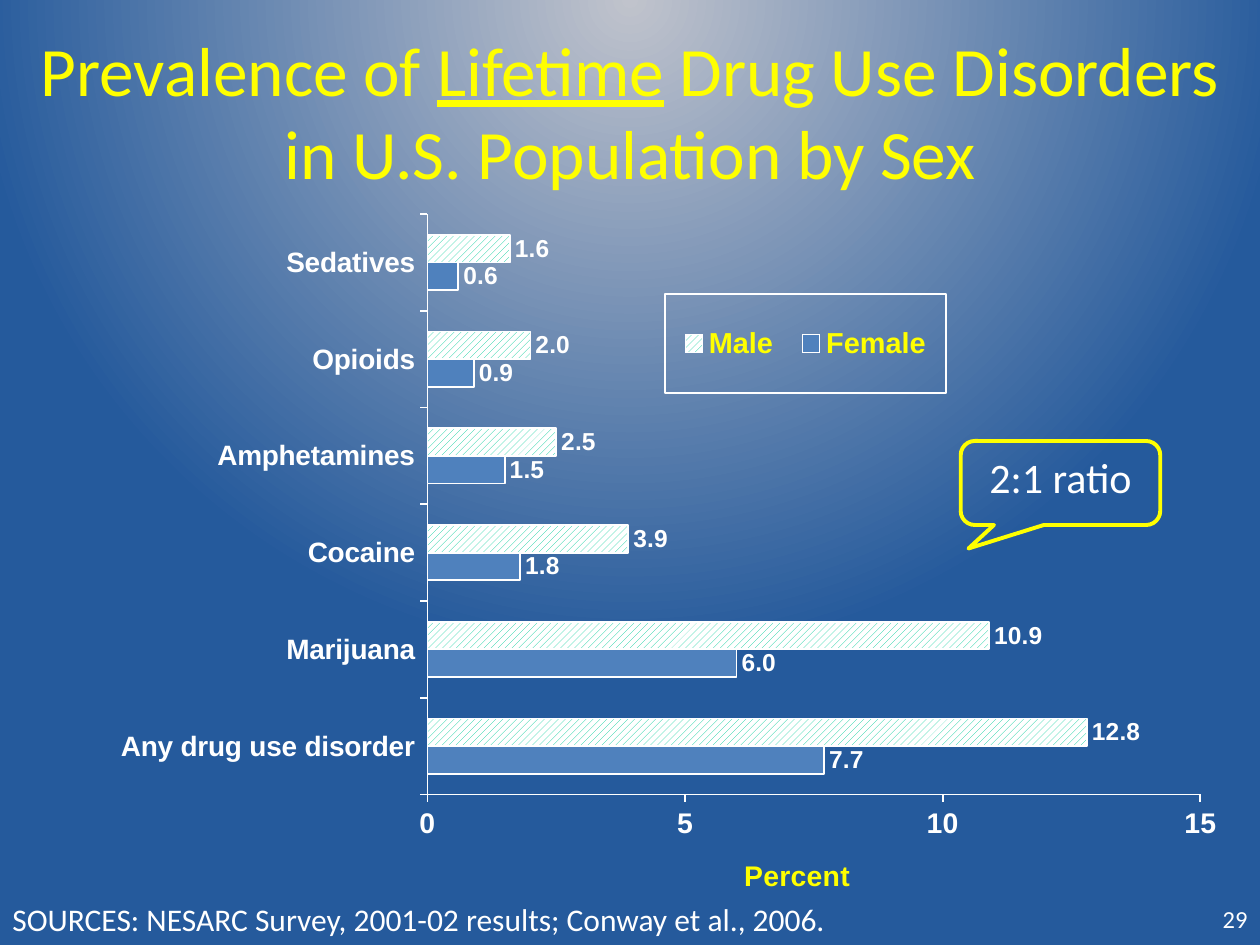
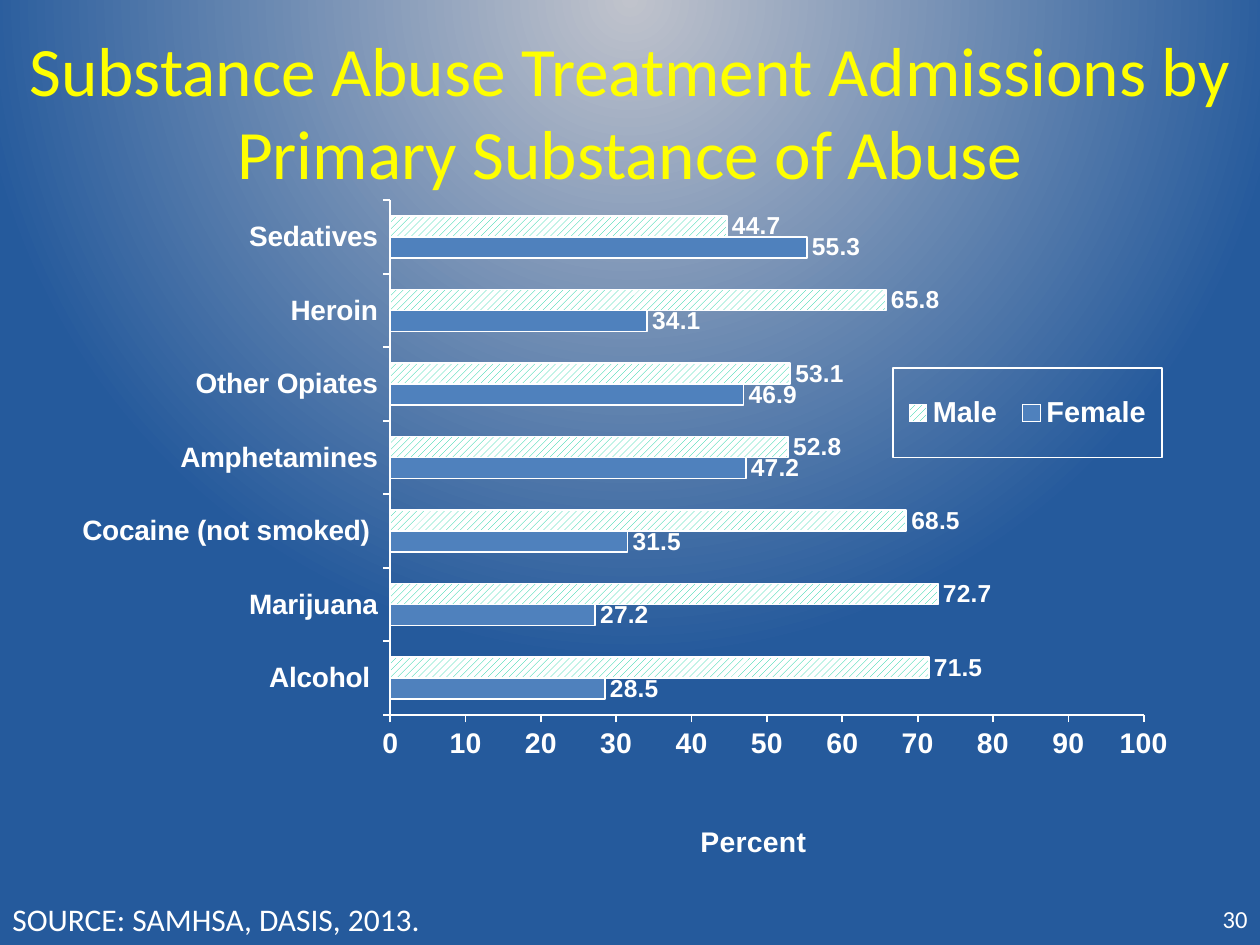
from pptx import Presentation
from pptx.chart.data import CategoryChartData
from pptx.dml.color import RGBColor
from pptx.enum.chart import XL_CHART_TYPE, XL_LABEL_POSITION, XL_LEGEND_POSITION, XL_TICK_MARK
from pptx.enum.dml import MSO_PATTERN
from pptx.enum.shapes import MSO_SHAPE
from pptx.enum.text import MSO_ANCHOR, PP_ALIGN
from pptx.oxml import parse_xml
from pptx.oxml.ns import nsdecls, qn
from pptx.util import Inches, Pt

BARS = XL_CHART_TYPE.BAR_CLUSTERED
OUTER = XL_LABEL_POSITION.OUTSIDE_END
RIGHT_KEY = XL_LEGEND_POSITION.RIGHT
TICK, NO_TICK = XL_TICK_MARK.OUTSIDE, XL_TICK_MARK.NONE
STRIPES = MSO_PATTERN.WIDE_UPWARD_DIAGONAL
BUBBLE = MSO_SHAPE.ROUNDED_RECTANGULAR_CALLOUT
TOP, MIDDLE = MSO_ANCHOR.TOP, MSO_ANCHOR.MIDDLE
LEFT, CENTER, RIGHT = PP_ALIGN.LEFT, PP_ALIGN.CENTER, PP_ALIGN.RIGHT

YELLOW, WHITE, BLUE, GREEN = "FFFF00", "FFFFFF", "4F81BD", "00CC99"
GLOW = [(0, "C0C3CC"), (84, "255A9C"), (100, "255A9C")]
COLS, ROWS = 120, 90


def tint(code):
    """Turn a hex string into a colour."""
    return RGBColor.from_string(code)


def style(font, size, color, face, bold=None):
    """Set the look of a font."""
    font.size, font.name, font.bold = Pt(size), face, bold
    font.color.rgb = tint(color)


def place(node, index, spot, inner=False):
    """Give a chart part a manual layout in shares of the chart."""
    for old in node.findall(qn("c:layout")):
        node.remove(old)
    target = '<c:layoutTarget val="inner"/>' if inner else ""
    modes = "".join(f'<c:{k}Mode val="edge"/>' for k in "xy")
    sizes = "".join(f'<c:{k} val="{v}"/>' for k, v in zip("xywh", spot))
    node.insert(index, parse_xml(
        f'<c:layout {nsdecls("c")}><c:manualLayout>{target}{modes}{sizes}'
        '</c:manualLayout></c:layout>'))


class Deck:
    """Hold the shared style and the current slide."""

    def __init__(self):
        """Open an empty deck."""
        self.prs = Presentation()
        self.prs.slide_width, self.prs.slide_height = Inches(10), Inches(7.5)
        self.slide = None

    def box(self, x, y, w, h):
        """Turn grid columns and rows into lengths."""
        col, row = self.prs.slide_width / COLS, self.prs.slide_height / ROWS
        return [round(n) for n in (x * col, y * row, w * col, h * row)]

    def page(self, title, source, width, number, mark=None):
        """Start a slide with its glow, title, source and number."""
        self.slide = self.prs.slides.add_slide(self.prs.slide_layouts[6])
        self.glow()
        self.text(title, (1, 2, 118, 17), 39.6, YELLOW, CENTER, MIDDLE, mark)
        self.text(source, (0, 85.1, width, 4.8), 18)
        self.text(number, (92, 85.1, 28, 4.8), 14, WHITE, RIGHT, MIDDLE)

    def glow(self):
        """Fill the background with a round gradient."""
        self.slide.background.fill.solid()
        holder = self.slide.element.find(".//" + qn("p:bgPr"))
        stops = "".join(f'<a:gs pos="{at * 1000}"><a:srgbClr val="{code}"/></a:gs>'
                        for at, code in GLOW)
        holder.replace(holder[0], parse_xml(
            f'<a:gradFill {nsdecls("a")} rotWithShape="1"><a:gsLst>{stops}</a:gsLst>'
            '<a:path path="circle"><a:fillToRect l="50000" t="-80000" r="50000" b="180000"/>'
            '</a:path></a:gradFill>'))

    def text(self, words, spot, size, color=WHITE, align=LEFT, anchor=TOP, mark=None):
        """Add a text box, with one marked phrase underlined."""
        frame = self.slide.shapes.add_textbox(*self.box(*spot)).text_frame
        self.label(frame, words, size, color, align, anchor, mark)

    def label(self, frame, words, size, color, align, anchor, mark=None):
        """Put styled words in a frame."""
        frame.word_wrap, frame.vertical_anchor = True, anchor
        line = frame.paragraphs[0]
        line.alignment = align
        if mark:
            head, tail = words.split(mark)
            for part in (head, mark, tail):
                run = line.add_run()
                run.text = part
                run.font.underline = part == mark
        else:
            line.text = words
        for run in line.runs:
            style(run.font, size, color, "Calibri")

    def bubble(self, words, spot):
        """Add an outlined callout."""
        shape = self.slide.shapes.add_shape(BUBBLE, *self.box(*spot))
        shape.shadow.inherit = False
        shape.fill.background()
        shape.line.color.rgb, shape.line.width = tint(YELLOW), Pt(2.25)
        for i, share in enumerate((-0.461, 0.78, 0.167)):
            shape.adjustments[i] = share
        self.label(shape.text_frame, words, 24, WHITE, CENTER, TOP)

    def chart(self, spot, rows, top, step, plot, key, name, color):
        """Add a bar chart of rows of label, female and male."""
        data = CategoryChartData(number_format="0.0")
        cats, female, male = zip(*rows)
        data.categories = cats
        data.add_series("Female", female)
        data.add_series("Male", male)
        chart = self.slide.shapes.add_chart(BARS, *self.box(*spot), data).chart
        chart.has_title = False
        style(chart.font, 16.2, WHITE, "Arial", True)
        place(chart.plots[0]._element.getparent(), 0, plot, True)
        self.bars(chart.plots[0])
        self.axis(chart.category_axis, 16)
        axis = chart.value_axis
        self.axis(axis, 16.2)
        axis.minimum_scale, axis.maximum_scale, axis.major_unit = 0, top, step
        axis.tick_labels.number_format = "0"
        axis.tick_labels.number_format_is_linked = False
        title = axis.axis_title
        title.text_frame.text = "Percent"
        style(title.text_frame.paragraphs[0].runs[0].font, 16.2, color, "Arial", True)
        place(title._element, 1, name)
        self.legend(chart, key, color)

    def bars(self, plot):
        """Style the bars and their value labels."""
        plot.gap_width, plot.overlap, plot.vary_by_categories = 150, 0, False
        for series in plot.series:
            fill, line = series.format.fill, series.format.line
            if series.name == "Male":
                fill.patterned()
                fill.pattern = STRIPES
                fill.fore_color.rgb, fill.back_color.rgb = tint(GREEN), tint(WHITE)
            else:
                fill.solid()
                fill.fore_color.rgb = tint(BLUE)
            line.color.rgb, line.width = tint(WHITE), Pt(1)
            series.invert_if_negative = False
            tags = series.data_labels
            tags.show_value, tags.position = True, OUTER
            tags.number_format, tags.number_format_is_linked = "0.0", False
            style(tags.font, 14, WHITE, "Arial", True)

    def axis(self, axis, size):
        """Style one axis."""
        axis.has_major_gridlines = False
        axis.major_tick_mark, axis.minor_tick_mark = TICK, NO_TICK
        axis.format.line.color.rgb, axis.format.line.width = tint(WHITE), Pt(1)
        style(axis.tick_labels.font, size, WHITE, "Arial", True)

    def legend(self, chart, spot, color):
        """Add a framed legend."""
        chart.has_legend = True
        key = chart.legend
        key.position, key.include_in_layout = RIGHT_KEY, False
        place(key._element, 1, spot)
        key._element.append(parse_xml(
            f'<c:spPr {nsdecls("c", "a")}><a:noFill/><a:ln w="{Pt(1)}"><a:solidFill>'
            f'<a:srgbClr val="{WHITE}"/></a:solidFill></a:ln></c:spPr>'))
        style(key.font, 16.5, color, "Arial", True)


def main():
    """Build both slides."""
    deck = Deck()
    deck.page("Prevalence of Lifetime Drug Use Disorders in U.S. Population by Sex",
              "SOURCES: NESARC Survey, 2001-02 results; Conway et al., 2006.",
              115, "29", "Lifetime")
    use = [("Any drug use disorder", 7.7, 12.8), ("Marijuana", 6, 10.9),
           ("Cocaine", 1.8, 3.9), ("Amphetamines", 1.5, 2.5),
           ("Opioids", 0.9, 2), ("Sedatives", 0.6, 1.6)]
    deck.chart((3, 18.75, 113.25, 71.25), use, 15, 5, (0.333, 0.023, 0.65, 0.776),
               (0.533, 0.13, 0.236, 0.132), (0.595, 0.876), YELLOW)
    deck.bubble("2:1 ratio", (91.5, 42, 19, 8))

    deck.page("Substance Abuse Treatment Admissions by Primary Substance of Abuse",
              "SOURCE: SAMHSA, DASIS, 2013.", 57, "30")
    care = [("Alcohol ", 28.5, 71.5), ("Marijuana", 27.2, 72.7),
            ("Cocaine (not smoked) ", 31.5, 68.5), ("Amphetamines", 47.2, 52.8),
            ("Other Opiates", 46.9, 53.1), ("Heroin", 34.1, 65.8),
            ("Sedatives", 55.3, 44.7)]
    deck.chart((4, 18.75, 108.4, 64), care, 100, 10, (0.306, 0.005, 0.662, 0.766),
               (0.748, 0.255, 0.236, 0.133), (0.574, 0.924), WHITE)
    deck.prs.save("out.pptx")


if __name__ == "__main__":
    main()
